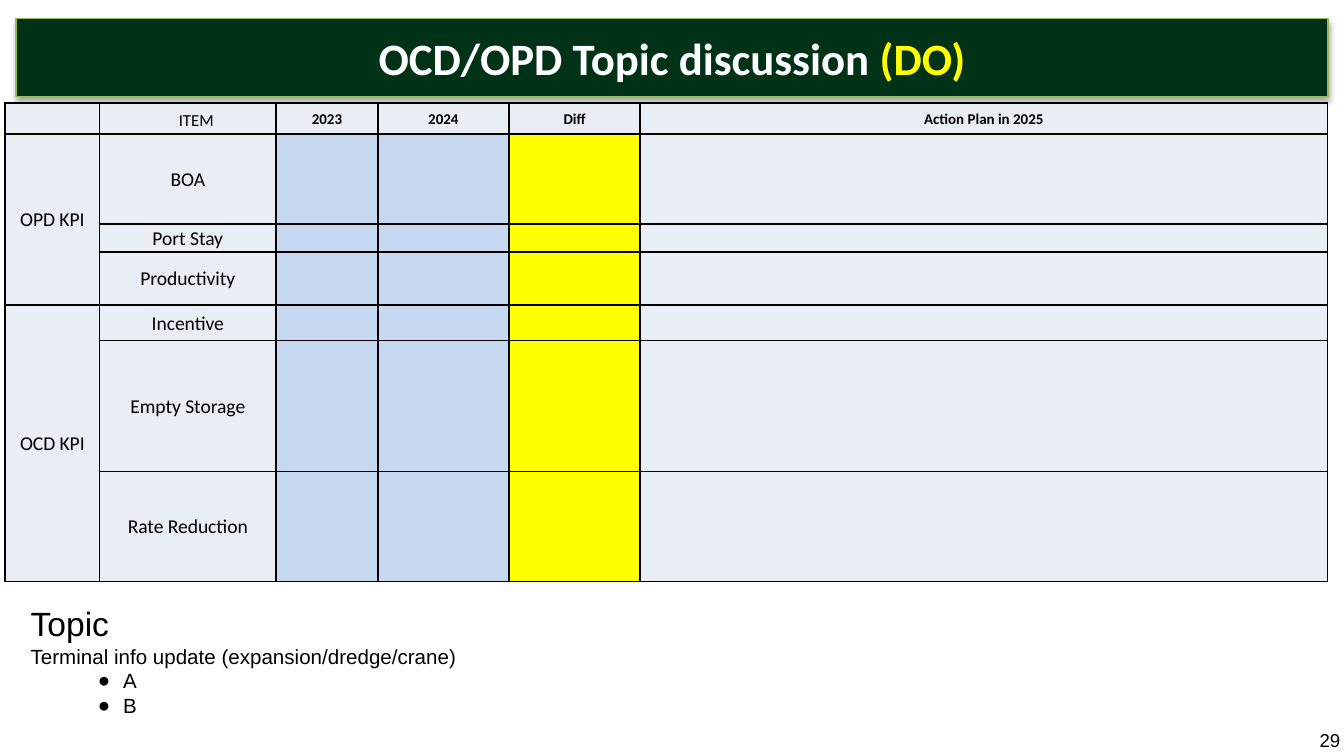
import dataclasses

import lxml.etree
import pptx
import pptx.dml.color
import pptx.enum.shapes
import pptx.enum.text
import pptx.oxml.ns
import pptx.util

Cm = pptx.util.Cm
Pt = pptx.util.Pt
qn = pptx.oxml.ns.qn
CENTER = pptx.enum.text.PP_ALIGN.CENTER
MIDDLE = pptx.enum.text.MSO_ANCHOR.MIDDLE


@dataclasses.dataclass(frozen=True)
class Theme:
    banner: str = "003217"
    banner_line: str = "98B955"
    white: str = "FFFFFF"
    black: str = "000000"
    highlight: str = "FFFF00"
    plain_cell: str = "E9EDF4"
    year_cell: str = "C6D9F1"
    heading_font: str = "Calibri"
    body_font: str = "Arial"
    title: float = 24
    topic: float = 18
    body: float = 11
    item: float = 10.5
    page: float = 10
    item_header: float = 9
    header: float = 8


def rgb(color):
    return pptx.dml.color.RGBColor.from_string(color)


def add_text(paragraph, text, *, size, font, color="000000", bold=False, align=None):
    run = paragraph.add_run()
    run.text = text
    run.font.size = Pt(size)
    run.font.name = font
    run.font.bold = bold
    run.font.color.rgb = rgb(color)
    if align is not None:
        paragraph.alignment = align


def add_element(parent, tag, **attributes):
    values = {name: str(value) for name, value in attributes.items()}
    return lxml.etree.SubElement(parent, qn(tag), values)


class SlideBuilder:
    def __init__(self, slide, theme):
        self.slide = slide
        self.theme = theme

    def banner(self, left, top, width, height, parts):
        shape = self.slide.shapes.add_shape(
            pptx.enum.shapes.MSO_SHAPE.RECTANGLE, Cm(left), Cm(top), Cm(width), Cm(height))
        shape.fill.solid()
        shape.fill.fore_color.rgb = rgb(self.theme.banner)
        shape.line.color.rgb = rgb(self.theme.banner_line)
        shape.line.width = Pt(0.75)
        # Soft shadow straight below
        shape.shadow.inherit = False
        effects = shape.element.spPr.find(qn("a:effectLst"))
        shadow = add_element(effects, "a:outerShdw", blurRad=Pt(3.1), dist=Pt(1.8),
                             dir=90 * 60000, rotWithShape=0)
        shadow_color = add_element(shadow, "a:srgbClr", val=self.theme.black)
        add_element(shadow_color, "a:alpha", val=35000)
        frame = shape.text_frame
        frame.margin_left = frame.margin_right = frame.margin_top = frame.margin_bottom = 0
        frame.vertical_anchor = MIDDLE
        for text, color in parts:
            add_text(frame.paragraphs[0], text, size=self.theme.title, bold=True,
                     font=self.theme.heading_font, color=color, align=CENTER)

    def text_box(self, left, top, width, height):
        box = self.slide.shapes.add_textbox(Cm(left), Cm(top), Cm(width), Cm(height))
        box.text_frame.word_wrap = True
        return box.text_frame

    def bullet(self, paragraph, text):
        paragraph.level = 1
        properties = paragraph._p.get_or_add_pPr()
        properties.set("marL", str(Cm(1.75)))
        properties.set("indent", str(Cm(-0.48)))
        add_element(properties, "a:buFont", typeface=self.theme.body_font)
        add_element(properties, "a:buChar", char="●")
        add_text(paragraph, text, size=self.theme.body, font=self.theme.body_font)

    def table(self, left, top, widths, heights):
        table = self.slide.shapes.add_table(
            len(heights), len(widths), Cm(left), Cm(top),
            Cm(sum(widths)), Cm(sum(heights))).table
        table.first_row = table.horz_banding = False
        for column, width in zip(table.columns, widths):
            column.width = Cm(width)
        for row, height in zip(table.rows, heights):
            row.height = Cm(height)
        return table

    def cell(self, cell, fill, text="", size=None, bold=False):
        size = size or self.theme.header
        cell.margin_left = cell.margin_right = cell.margin_top = Cm(0.03)
        cell.margin_bottom = 0
        cell.vertical_anchor = MIDDLE
        for side in ("a:lnL", "a:lnR", "a:lnT", "a:lnB"):
            line = add_element(cell._tc.get_or_add_tcPr(), side, w=Pt(1))
            add_element(add_element(line, "a:solidFill"), "a:srgbClr", val=self.theme.black)
        cell.fill.solid()
        cell.fill.fore_color.rgb = rgb(fill)
        paragraph = cell.text_frame.paragraphs[0]
        if text:
            add_text(paragraph, text, size=size, bold=bold,
                     font=self.theme.heading_font, align=CENTER)
        else:
            # Keeps empty cells from stretching low rows
            add_element(paragraph._p, "a:endParaRPr", sz=int(size * 100))


def main():
    theme = Theme()
    presentation = pptx.Presentation()
    presentation.slide_width = Cm(25.4)
    presentation.slide_height = Cm(14.29)
    slide = presentation.slides.add_slide(presentation.slide_layouts[6])
    builder = SlideBuilder(slide, theme)

    # Title banner
    builder.banner(0.3, 0.35, 24.8, 1.48, [
        ("OCD/OPD Topic discussion ", theme.white), ("(DO)", theme.highlight)])

    # KPI table
    headers = ["", "　ITEM", "2023", "2024", "Diff", "Action Plan in 2025"]
    groups = {
        "OPD KPI": ["BOA", "Port Stay", "Productivity"],
        "OCD KPI": ["Incentive", "Empty Storage", "Rate Reduction"],
    }
    column_fills = [theme.plain_cell, theme.plain_cell, theme.year_cell,
                    theme.year_cell, theme.highlight, theme.plain_cell]
    table = builder.table(0.1, 1.95, [1.78, 3.34, 1.92, 2.48, 2.48, 12.99],
                          [0.58, 1.7, 0.53, 1, 0.68, 2.47, 2.08])
    for column, header in enumerate(headers):
        is_item = column == 1
        builder.cell(table.cell(0, column), theme.plain_cell, header, bold=not is_item,
                     size=theme.item_header if is_item else theme.header)
    row = 1
    for group, items in groups.items():
        first_row = row
        for item in items:
            labels = [group if row == first_row else "", item, "", "", "", ""]
            for column, (label, fill) in enumerate(zip(labels, column_fills)):
                builder.cell(table.cell(row, column), fill, label,
                             size=theme.item if label else None)
            row += 1
        table.cell(first_row, 0).merge(table.cell(row - 1, 0))

    # Page number
    page = builder.text_box(24.69, 13.69, 1.63, 0.58)
    page.vertical_anchor = MIDDLE
    add_text(page.paragraphs[0], "29", size=theme.page, font=theme.body_font)

    # Topic notes
    notes = builder.text_box(0.33, 11.28, 24.79, 3.38)
    add_text(notes.paragraphs[0], "Topic", size=theme.topic, font=theme.body_font)
    add_text(notes.add_paragraph(), "Terminal info update (expansion/dredge/crane)",
             size=theme.body, font=theme.body_font)
    for text in ("A", "B"):
        builder.bullet(notes.add_paragraph(), text)

    presentation.save("out.pptx")


if __name__ == "__main__":
    main()
